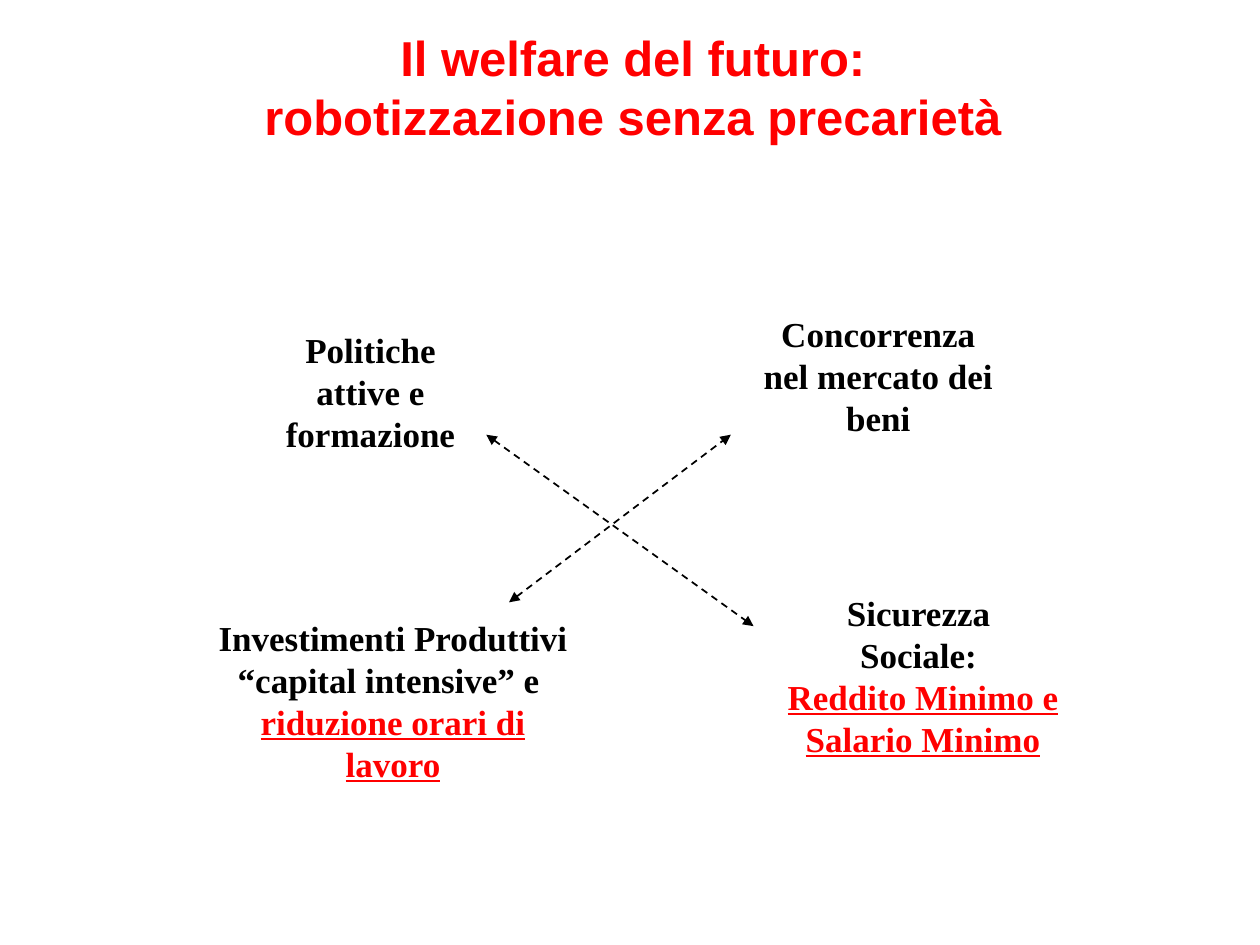
import pptx
import pptx.dml.color
import pptx.enum.dml
import pptx.enum.shapes
import pptx.enum.text
import pptx.oxml.ns
import pptx.util
from dataclasses import dataclass
from lxml import etree

Pt = pptx.util.Pt
RGB = pptx.dml.color.RGBColor
Anchor = pptx.enum.text.MSO_ANCHOR


@dataclass(frozen=True)
class Theme:
    ink: RGB = RGB(0, 0, 0)
    accent: RGB = RGB(255, 0, 0)
    title_font: str = "Arial"
    body_font: str = "Times New Roman"
    title_size: int = 28
    body_size: int = 20
    line_width: int = 1


THEME = Theme()


def write(p, text, font=THEME.body_font, size=THEME.body_size,
          color=THEME.ink, underline=None):
    p.alignment = pptx.enum.text.PP_ALIGN.CENTER
    r = p.add_run()
    r.text = text
    r.font.name = font
    r.font.size = Pt(size)
    r.font.bold = True
    r.font.underline = underline
    r.font.color.rgb = color


def fill_frame(tf, lines, anchor, inset_y):
    tf.word_wrap = True
    tf.auto_size = pptx.enum.text.MSO_AUTO_SIZE.NONE
    tf.vertical_anchor = anchor
    tf.margin_left = tf.margin_right = Pt(7.2)
    tf.margin_top = tf.margin_bottom = Pt(inset_y)
    for i, (text, style) in enumerate(lines):
        p = tf.add_paragraph() if i else tf.paragraphs[0]
        write(p, text, **style)


def add_title(s, lines, x, y, w, h):
    sp = s.shapes.title
    sp.left, sp.top, sp.width, sp.height = Pt(x), Pt(y), Pt(w), Pt(h)
    style = dict(font=THEME.title_font, size=THEME.title_size, color=THEME.accent)
    fill_frame(sp.text_frame, [(text, style) for text in lines], Anchor.TOP, 3.6)


def add_policy(s, x, y, w, h, plain, stressed=()):
    sp = s.shapes.add_textbox(Pt(x), Pt(y), Pt(w), Pt(h))
    lines = [(text, {}) for text in plain]
    lines += [(text, dict(color=THEME.accent, underline=True)) for text in stressed]
    fill_frame(sp.text_frame, lines, Anchor.MIDDLE, 3)


def add_double_arrow(s, x1, y1, x2, y2):
    sp = s.shapes.add_connector(pptx.enum.shapes.MSO_CONNECTOR.STRAIGHT,
                                Pt(x1), Pt(y1), Pt(x2), Pt(y2))
    sp.line.color.rgb = THEME.ink
    sp.line.width = Pt(THEME.line_width)
    sp.line.dash_style = pptx.enum.dml.MSO_LINE.DASH
    qn = pptx.oxml.ns.qn
    ln = sp.line._get_or_add_ln()
    for end in ("a:headEnd", "a:tailEnd"):
        etree.SubElement(ln, qn(end), type="triangle")
    etree.SubElement(sp._element.spPr, qn("a:effectLst"))


def main():
    """Build the slide on the welfare of the future."""
    prs = pptx.Presentation()
    prs.slide_width, prs.slide_height = Pt(720), Pt(540)
    s = prs.slides.add_slide(prs.slide_layouts[5])
    add_title(s, ["Il welfare del futuro: ", "robotizzazione senza precarietà "],
              31, 12.2, 669, 75)
    add_policy(s, 428.4, 179.3, 147, 70.6, ["Concorrenza nel mercato dei beni"])
    add_policy(s, 428.4, 350.6, 198, 70.6, ["Sicurezza ", "Sociale: "],
               ["Reddito Minimo e Salario Minimo"])
    add_policy(s, 112.3, 334.8, 224.6, 131,
               ["Investimenti Produttivi “capital intensive” e "],
               ["riduzione orari di lavoro"])
    add_policy(s, 144, 179.3, 135.4, 88.6, ["Politiche attive e formazione"])
    add_double_arrow(s, 277.9, 248.4, 430.6, 357.8)
    add_double_arrow(s, 290.9, 344.2, 417.6, 248.4)
    prs.save("out.pptx")


if __name__ == "__main__":
    main()
